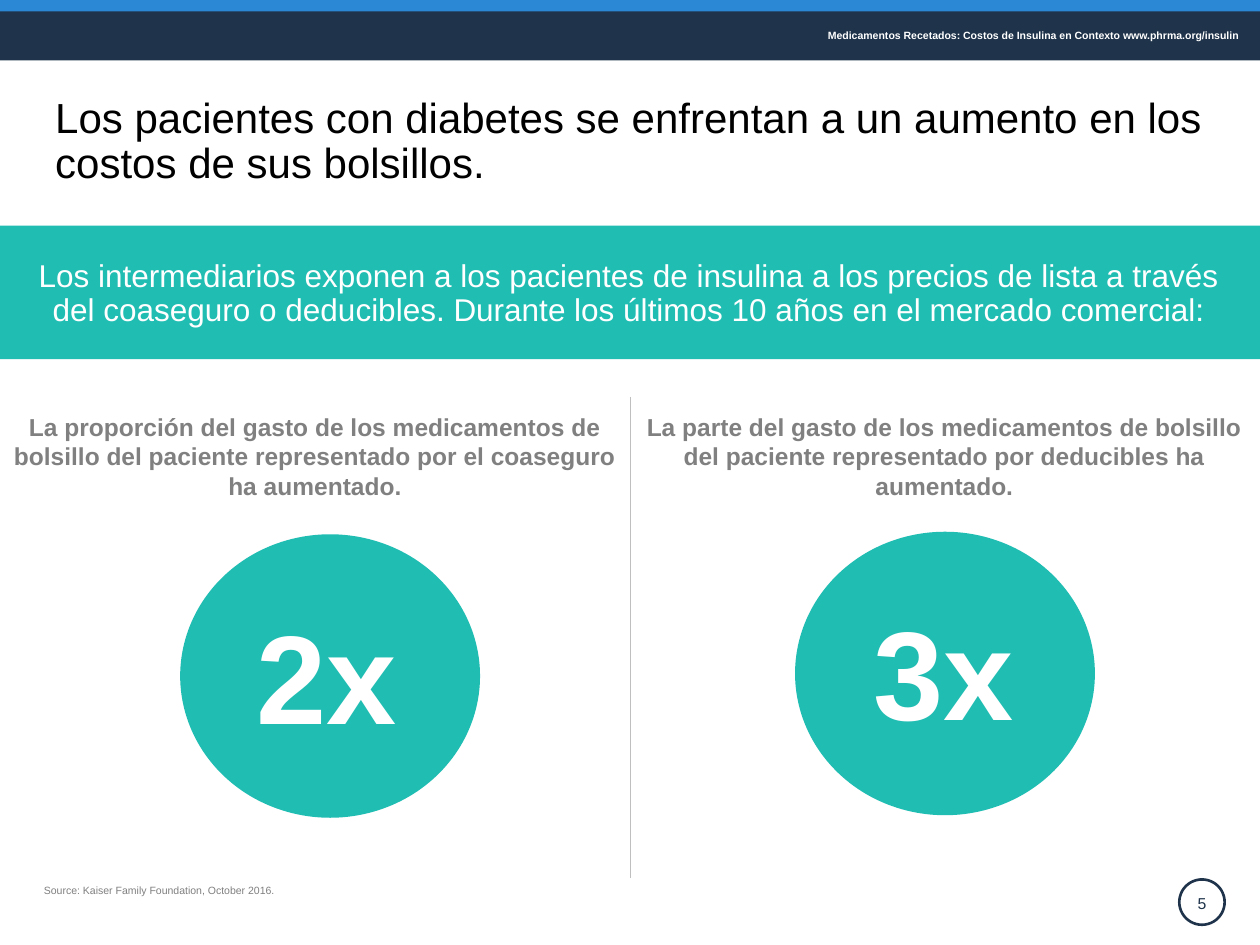
from dataclasses import dataclass
from lxml.etree import SubElement
from pptx import Presentation
from pptx.dml.color import RGBColor
from pptx.enum.shapes import MSO_CONNECTOR as Conn, MSO_SHAPE as Shape
from pptx.enum.text import MSO_ANCHOR as Anchor, PP_ALIGN as Align
from pptx.oxml.ns import qn
from pptx.util import Inches, Pt

# Grid of 100 columns by 75 rows
COLS, ROWS = 100, 75
NAVY, BLUE, TEAL = "1F334A", "2B88D4", "20BDB3"
WHITE, BLACK, GREY, RULE = "FFFFFF", "000000", "808080", "BFBFBF"

prs = Presentation()
prs.slide_width, prs.slide_height = Inches(10), Inches(7.5)
s = prs.slides.add_slide(prs.slide_layouts[6])


@dataclass
class Box:
    col: float
    row: float
    cols: float
    rows: float

    def emu(self) -> tuple[int, int, int, int]:
        return x(self.col), y(self.row), x(self.cols), y(self.rows)


@dataclass
class Finding:
    caption: str
    caption_box: Box
    factor: str
    circle: Box
    factor_box: Box


def x(col: float) -> int:
    return round(prs.slide_width * col / COLS)


def y(row: float) -> int:
    return round(prs.slide_height * row / ROWS)


def rgb(color: str) -> RGBColor:
    return RGBColor.from_string(color)


def add_block(kind: Shape, box: Box, fill: str, line: str = "") -> None:
    sp = s.shapes.add_shape(kind, *box.emu())
    sp.shadow.inherit = False
    sp.fill.solid()
    sp.fill.fore_color.rgb = rgb(fill)
    if line:
        sp.line.color.rgb = rgb(line)
        sp.line.width = Pt(1.5)
    else:
        sp.line.fill.background()


def add_text(box: Box, text: str, size: float, color: str, align: Align = Align.CENTER,
             bold: bool = False, anchor: Anchor = Anchor.TOP,
             spacing: float = 1.0, wrap: bool = True) -> None:
    tf = s.shapes.add_textbox(*box.emu()).text_frame
    tf.word_wrap = wrap
    tf.vertical_anchor = anchor
    p = tf.paragraphs[0]
    p.alignment = align
    p.line_spacing = spacing
    r = p.add_run()
    r.text = text
    r.font.name, r.font.size, r.font.bold = "Arial", Pt(size), bold
    r.font.color.rgb = rgb(color)


def add_divider(col: float, top: float, bottom: float) -> None:
    line = s.shapes.add_connector(Conn.STRAIGHT, x(col), y(top), x(col), y(bottom))
    line.line.color.rgb = rgb(RULE)
    line.line.width = Pt(0.5)
    SubElement(line._element.spPr, qn("a:effectLst"))


def add_finding(f: Finding) -> None:
    add_block(Shape.OVAL, f.circle, TEAL)
    add_text(f.caption_box, f.caption, 14, GREY, bold=True)
    add_text(f.factor_box, f.factor, 72, WHITE, bold=True)


# Bands and page number
add_block(Shape.RECTANGLE, Box(0, 0, COLS, 1.1), BLUE)
add_block(Shape.RECTANGLE, Box(0, 0.9, COLS, 3.9), NAVY)
add_block(Shape.RECTANGLE, Box(0, 17.9, COLS, 10.6), TEAL)
add_block(Shape.OVAL, Box(93.6, 69.8, 3.6, 3.6), WHITE, NAVY)
add_text(Box(92.8, 69.7, 5.2, 4), "5", 9, NAVY, anchor=Anchor.MIDDLE)

# Header, title and lead statement
add_text(Box(60.6, 1.8, 38.7, 2),
         "Medicamentos Recetados: Costos de Insulina en Contexto www.phrma.org/insulin",
         6, WHITE, Align.RIGHT, bold=True)
add_text(Box(3.4, 7.3, 93.7, 8),
         "Los pacientes con diabetes se enfrentan a un aumento en los costos de sus bolsillos.",
         24, BLACK, Align.LEFT, anchor=Anchor.MIDDLE, spacing=0.9)
add_text(Box(0.7, 19.5, 98.4, 7.7),
         "Los intermediarios exponen a los pacientes de insulina a los precios de lista a través "
         "del coaseguro o deducibles. Durante los últimos 10 años en el mercado comercial:",
         18, WHITE, anchor=Anchor.MIDDLE, spacing=0.9)

# Two findings either side of the divider
add_divider(COLS / 2, 31.5, 69.7)
FINDINGS = [
    Finding("La proporción del gasto de los medicamentos de bolsillo del paciente "
            "representado por el coaseguro ha aumentado.", Box(0, 32.2, 50, 8.1),
            "2x", Box(14.3, 42.4, 23.8, 22.5), Box(19.1, 47, 13.7, 13.1)),
    Finding("La parte del gasto de los medicamentos de bolsillo del paciente "
            "representado por deducibles ha aumentado.", Box(49.9, 32.2, 50.1, 8.1),
            "3x", Box(63.1, 42.2, 23.8, 22.5), Box(68, 46.7, 13.7, 13.1)),
]
for finding in FINDINGS:
    add_finding(finding)

# Source
add_text(Box(2.5, 69.7, 20.8, 2), "Source: Kaiser Family Foundation, October 2016.",
         6, GREY, Align.LEFT, wrap=False)

prs.save("out.pptx")
